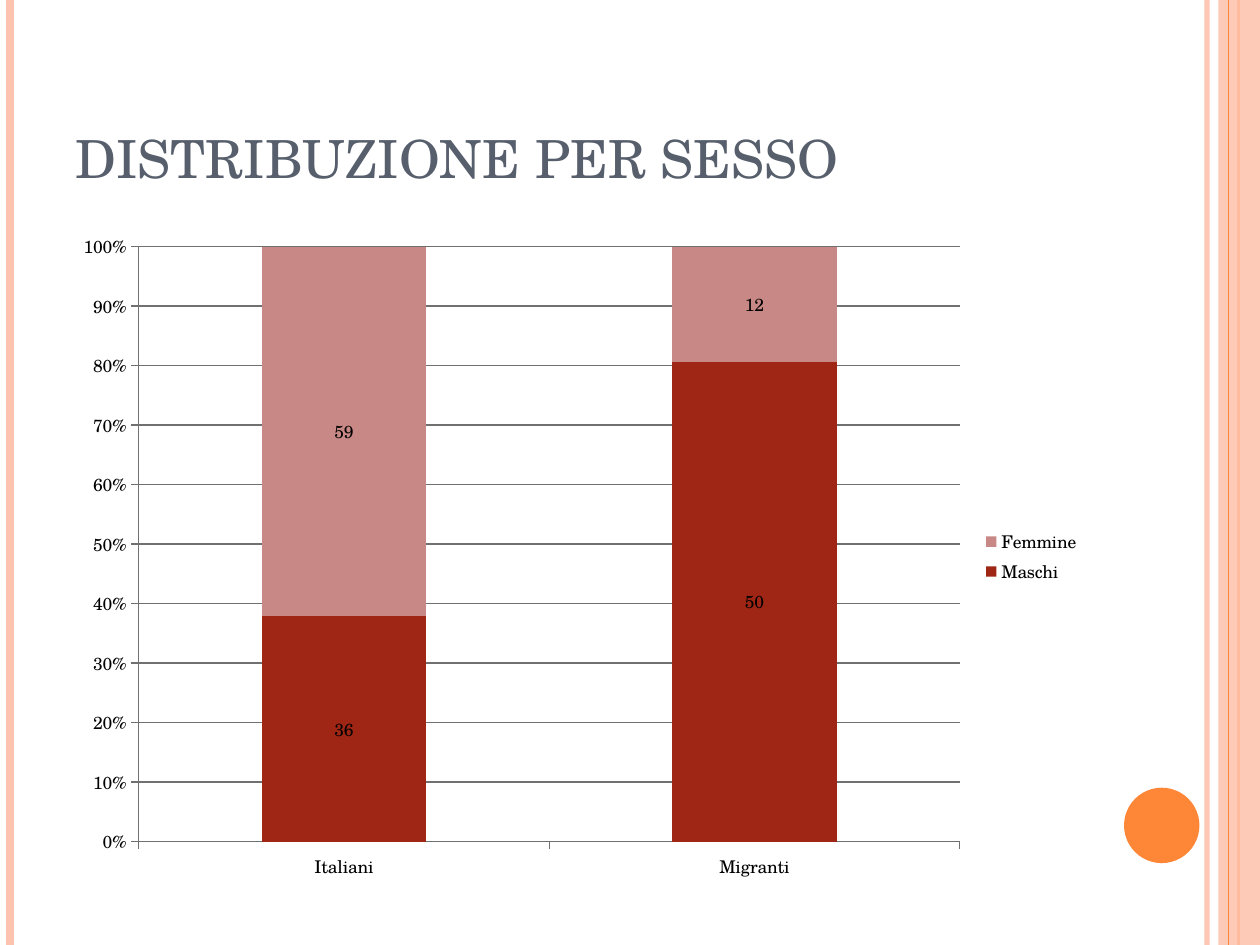
import lxml.etree
import pptx
import pptx.util
import pptx.chart.data
import pptx.dml.color
import pptx.enum.chart
import pptx.enum.shapes
import pptx.enum.text
import pptx.oxml.ns

Cm = pptx.util.Cm
Pt = pptx.util.Pt
qn = pptx.oxml.ns.qn

THEME = {
    "font": "TeX Gyre Schola",
    "title": "575F6D", "text": "000000", "axis": "707070",
    "peach": "FEC3AE", "orange": "FE8637",
    "title size": 30, "chart size": 10,
}
TITLE = "DISTRIBUZIONE PER SESSO"
GROUPS = ["Italiani", "Migranti"]
SERIES = [("Maschi", (36, 50), "9F2614"), ("Femmine", (59, 12), "C88885")]

WIDE, HIGH = 25.4, 19.05
LEFT, SPAN = 1.27, 20.75
BACK = [(24.33, "peach", 3, 93), (0.2, "peach", 4.5, 100), (24.97, "orange", 1.5, 100)]
FRONT = [(24.77, "orange", 0.75, 100)]
BAND = (24.56, 0, 0.84, HIGH)
DISC = (22.66, 15.88, 1.52, 1.52)


def tint(name):
    return pptx.dml.color.RGBColor.from_string(THEME.get(name, name))


def fade(part, share):
    if share < 100:
        node = part.find(".//" + qn("a:srgbClr"))
        lxml.etree.SubElement(node, qn("a:alpha"), val=str(share * 1000))


def style(font, size, color):
    font.name = THEME["font"]
    font.size = Pt(THEME[size])
    font.color.rgb = tint(color)


def stripe(slide, x, color, width, share):
    line = slide.shapes.add_connector(
        pptx.enum.shapes.MSO_CONNECTOR.STRAIGHT, Cm(x), 0, Cm(x), Cm(HIGH))
    line.line.color.rgb = tint(color)
    line.line.width = Pt(width)
    props = line._element.spPr
    fade(props, share)
    lxml.etree.SubElement(props, qn("a:effectLst"))


def solid(slide, kind, box, color, share=100):
    shape = slide.shapes.add_shape(kind, *map(Cm, box))
    shape.shadow.inherit = False
    shape.fill.solid()
    shape.fill.fore_color.rgb = tint(color)
    shape.line.fill.background()
    fade(shape._element.spPr, share)


def head(slide):
    title = slide.shapes.title
    title.left, title.top, title.width, title.height = map(Cm, (LEFT, 0.76, SPAN, 3.18))
    frame = title.text_frame
    frame.text = TITLE
    frame.word_wrap = True
    frame.vertical_anchor = pptx.enum.text.MSO_ANCHOR.BOTTOM
    para = frame.paragraphs[0]
    para.alignment = pptx.enum.text.PP_ALIGN.LEFT
    style(para.font, "title size", "title")


def graph(slide):
    data = pptx.chart.data.CategoryChartData()
    data.categories = GROUPS
    for name, vals, color in SERIES:
        data.add_series(name, vals)
    chart = slide.shapes.add_chart(
        pptx.enum.chart.XL_CHART_TYPE.COLUMN_STACKED_100,
        Cm(LEFT), Cm(4.45), Cm(SPAN), Cm(13.54), data).chart
    style(chart.font, "chart size", "text")
    chart.has_title = False
    chart.has_legend = True
    chart.legend.position = pptx.enum.chart.XL_LEGEND_POSITION.RIGHT
    chart.legend.include_in_layout = False

    plot = chart.plots[0]
    plot.gap_width, plot.overlap = 150, 100
    plot.vary_by_categories = False
    for series, (name, vals, color) in zip(plot.series, SERIES):
        series.format.fill.solid()
        series.format.fill.fore_color.rgb = tint(color)
        series.data_labels.show_value = True

    value = chart.value_axis
    value.has_major_gridlines = True
    value.maximum_scale, value.minimum_scale, value.major_unit = 1, 0, 0.1
    value.tick_labels.number_format = "0%"
    value.tick_labels.number_format_is_linked = False
    for axis in (value, chart.category_axis):
        axis.major_tick_mark = pptx.enum.chart.XL_TICK_MARK.OUTSIDE
        axis.minor_tick_mark = pptx.enum.chart.XL_TICK_MARK.NONE
    for part in (value, chart.category_axis, value.major_gridlines):
        part.format.line.color.rgb = tint("axis")
        part.format.line.width = Pt(0.75)


def main():
    deck = pptx.Presentation()
    deck.slide_width, deck.slide_height = Cm(WIDE), Cm(HIGH)
    slide = deck.slides.add_slide(deck.slide_layouts[5])
    kinds = pptx.enum.shapes.MSO_SHAPE
    for item in BACK:
        stripe(slide, *item)
    solid(slide, kinds.RECTANGLE, BAND, "peach", 87)
    for item in FRONT:
        stripe(slide, *item)
    solid(slide, kinds.OVAL, DISC, "orange")
    head(slide)
    graph(slide)
    deck.save("out.pptx")


if __name__ == "__main__":
    main()
